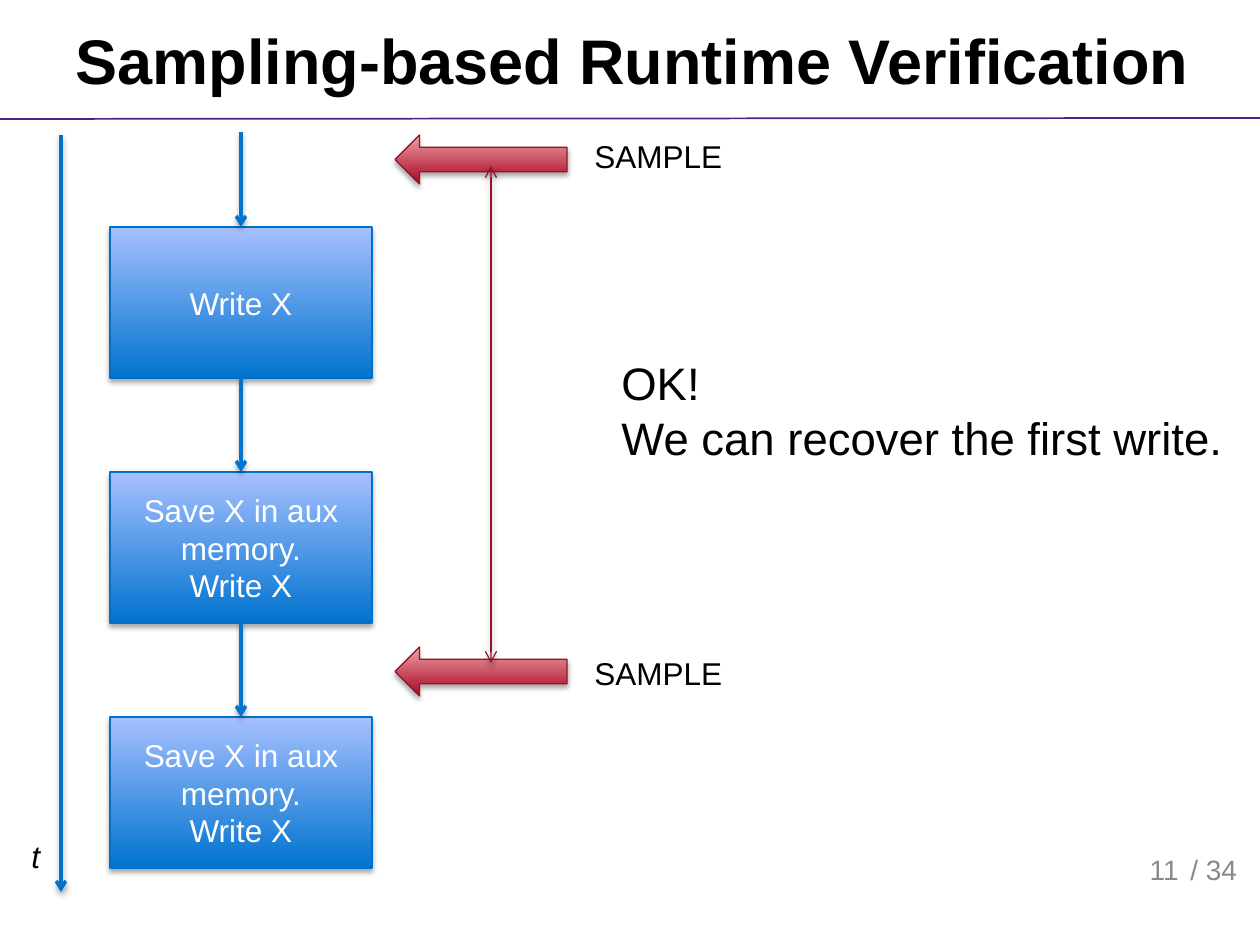
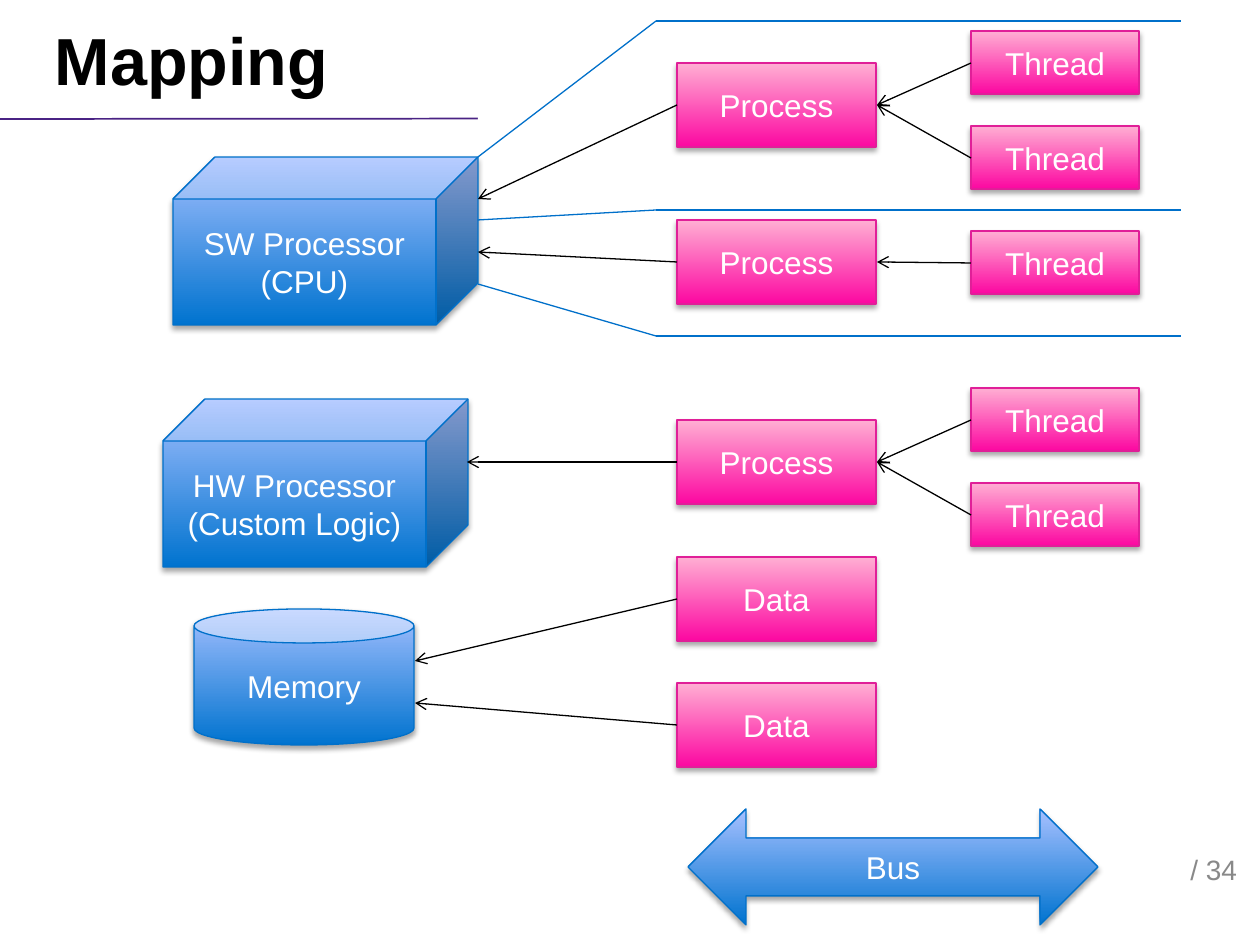
"""Build two slides on sampled runtime checks and on mapping work to hardware."""
from dataclasses import dataclass
from pptx import Presentation
from pptx.dml.color import RGBColor
from pptx.enum.shapes import MSO_CONNECTOR, MSO_SHAPE
from pptx.enum.text import MSO_ANCHOR, MSO_AUTO_SIZE, PP_ALIGN
from pptx.oxml import parse_xml
from pptx.oxml.ns import nsdecls
from pptx.util import Emu, Pt


@dataclass(frozen=True)
class Theme:
    font: str = "Arial"
    ink: str = "000000"
    white: str = "FFFFFF"
    gray: str = "898989"
    rule: str = "4A2384"
    flow: str = "0073CF"
    edge: str = "0070CA"
    wine: str = "96132B"
    blue: tuple = ("0073CF", "A6C0FF", "0070CA")
    pink: tuple = ("FC08A1", "FFAFD3", "E01F98")
    red: tuple = ("A90422", "EFA1A6", "96132B")
    body: int = 18
    foot: int = 16
    large: int = 26


look = Theme()
scale = 914400 / 126
rgb = RGBColor.from_string
flat = f"<a:effectLst {nsdecls('a')}/>"
shade = (f'<a:effectLst {nsdecls("a")}><a:outerShdw blurRad="39370" dist="22860" '
         'dir="5400000" rotWithShape="0"><a:srgbClr val="000000"><a:alpha val="35000"/>'
         '</a:srgbClr></a:outerShdw></a:effectLst>')


def put(slide, kind, box, hues=None, lines=(), size=look.body, ink=look.white,
        align=PP_ALIGN.CENTER, anchor=MSO_ANCHOR.MIDDLE, slant=False):
    place = [Emu(round(n * scale)) for n in box]
    if kind is None:
        item = slide.shapes.add_textbox(*place)
    else:
        item = slide.shapes.add_shape(kind, *place)
        if hues:
            item.fill.gradient()
            item.fill.gradient_angle = 90
            for stop, hue in zip(item.fill.gradient_stops, hues):
                stop.color.rgb = rgb(hue)
            item.line.color.rgb = rgb(hues[2])
            item.line.width = Pt(0.75)
        else:
            item.fill.solid()
            item.fill.fore_color.rgb = rgb(look.white)
            item.line.fill.background()
        item._element.spPr.append(parse_xml(shade if hues else flat))
    frame = item.text_frame
    frame.word_wrap = kind is not None
    frame.vertical_anchor = anchor
    for row, line in enumerate(lines):
        para = frame.add_paragraph() if row else frame.paragraphs[0]
        para.alignment = align
        run = para.add_run()
        run.text = line
        run.font.name, run.font.size = look.font, Pt(size)
        run.font.color.rgb = rgb(ink)
        run.font.italic = slant


def link(slide, start, end, hue=look.ink, width=0.75, tips=("tail",), glow=False):
    ends = [Emu(round(n * scale)) for n in (*start, *end)]
    line = slide.shapes.add_connector(MSO_CONNECTOR.STRAIGHT, *ends)
    line.line.color.rgb = rgb(hue)
    line.line.width = Pt(width)
    for tip in tips:
        line.line._get_or_add_ln().append(
            parse_xml(f'<a:{tip}End {nsdecls("a")} type="arrow"/>'))
    line._element.spPr.append(parse_xml(shade if glow else flat))


deck = Presentation()
deck.slide_width, deck.slide_height = (Emu(round(n * scale)) for n in (1260, 945))
left, top = PP_ALIGN.LEFT, MSO_ANCHOR.TOP
foot = dict(size=look.foot, ink=look.gray, anchor=MSO_ANCHOR.BOTTOM)
note = dict(ink=look.ink, align=left, anchor=top)

heads = [("Sampling-based Runtime Verification", 36, PP_ALIGN.CENTER),
         ("Mapping", 38, left)]
for words, size, align in heads:
    slide = deck.slides.add_slide(deck.slide_layouts[5])
    title = slide.shapes.title
    title.left, title.top, title.width, title.height = (
        Emu(round(n * scale)) for n in (42, 0, 1181, 118))
    title.text_frame.auto_size = MSO_AUTO_SIZE.NONE
    title.text_frame.vertical_anchor = MSO_ANCHOR.MIDDLE
    para = title.text_frame.paragraphs[0]
    para.alignment = align
    run = para.add_run()
    run.text = words
    run.font.name, run.font.size, run.font.bold = look.font, Pt(size), True
    run.font.color.rgb = rgb(look.ink)
    link(slide, (0, 119), (1260, 118), look.rule, 1, ())
    put(slide, None, (1178, 842, 82, 50), lines=["/ 34"], align=left, **foot)

sample, mapping = deck.slides

put(sample, None, (1057, 842, 134, 50), lines=["11"], align=PP_ALIGN.RIGHT, **foot)
save = ["Save X in aux memory.", "Write X"]
for row, lines in enumerate([["Write X"], save, save]):
    y = 227 + 245 * row
    put(sample, MSO_SHAPE.RECTANGLE, (110, y, 262, 151), look.blue, lines)
    link(sample, (241, y - 95), (241, y), look.flow, 2, glow=True)
link(sample, (61, 135), (61, 892), look.flow, 2, glow=True)
put(sample, None, (19, 831, 42, 50), lines=["t"], slant=True, **note)
for y, text_y in ((135, 131), (647, 648)):
    put(sample, MSO_SHAPE.LEFT_ARROW, (395, y, 172, 49), look.red)
    put(sample, None, (582, text_y, 155, 50), lines=["SAMPLE"], **note)
link(sample, (491, 166), (491, 663), look.wine, tips=("head", "tail"), glow=True)
put(sample, None, (609, 349, 633, 123), lines=["OK!", "We can recover the first write."],
    size=look.large, **note)

put(mapping, MSO_SHAPE.RECTANGLE, (478, 45, 782, 343))
parts = [
    (MSO_SHAPE.CUBE, (173, 157, 305, 168), ["SW Processor", "(CPU)"]),
    (MSO_SHAPE.CUBE, (163, 399, 305, 168), ["HW Processor", "(Custom Logic)"]),
    (MSO_SHAPE.CAN, (194, 609, 220, 136), ["Memory"]),
    (MSO_SHAPE.LEFT_RIGHT_ARROW, (688, 809, 410, 116), ["Bus"]),
]
for kind, box, lines in parts:
    put(mapping, kind, box, look.blue, lines)

tasks = [
    ("Process", 63, (478, 199), (31, 126)),
    ("Process", 220, (478, 252), (231,)),
    ("Process", 420, (467, 462), (388, 483)),
    ("Data", 557, (415, 661), ()),
    ("Data", 683, (415, 703), ()),
]
for name, y, goal, threads in tasks:
    put(mapping, MSO_SHAPE.RECTANGLE, (677, y, 199, 84), look.pink, [name])
    link(mapping, (677, y + 42), goal)
    for spot in threads:
        put(mapping, MSO_SHAPE.RECTANGLE, (971, spot, 168, 63), look.pink, ["Thread"])
        link(mapping, (971, spot + 32), (877, y + 42))

for y, lane in ((157, 21), (220, 210), (284, 336)):
    link(mapping, (478, y), (656, lane), look.edge, tips=())
    link(mapping, (1181, lane), (656, lane), look.edge, tips=())

deck.save("out.pptx")
